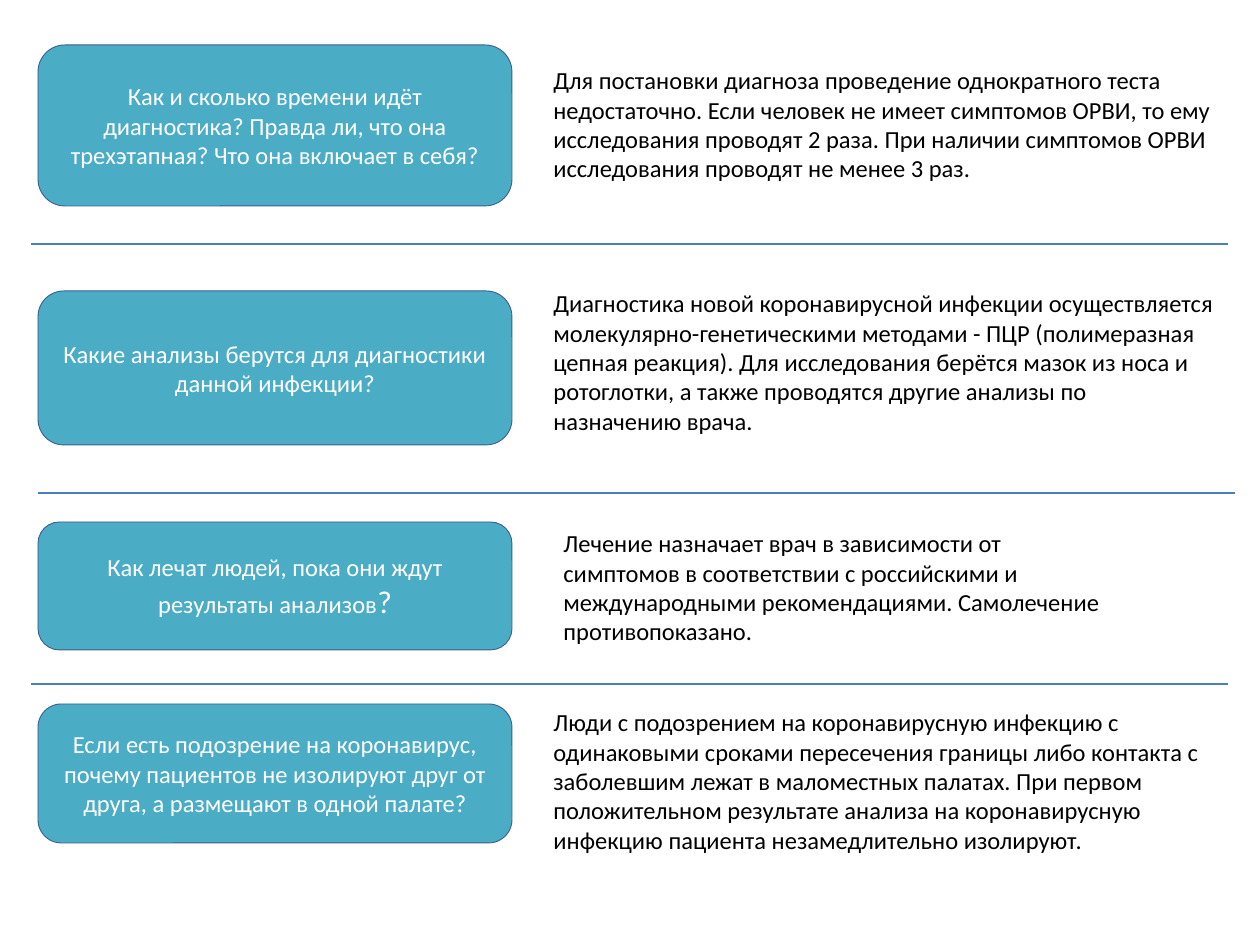
"""Build a slide of four questions about virus diagnostics with their answers."""
from lxml.etree import SubElement
from pptx import Presentation
from pptx.dml.color import RGBColor
from pptx.enum.shapes import MSO_CONNECTOR as Connector, MSO_SHAPE as Preset
from pptx.enum.text import MSO_ANCHOR as Anchor, MSO_AUTO_SIZE as Fit, PP_ALIGN as Align
from pptx.oxml.ns import qn
from pptx.util import Pt

PX_PER_INCH = 126
COLORS = {"card": "4BACC6", "outline": "3A5F8C", "rule": "4B7EBC",
          "question": "FFFFFF", "answer": "000000"}
QUESTION_FORMAT = {"word_wrap": True, "vertical_anchor": Anchor.MIDDLE}
ANSWER_FORMAT = {"word_wrap": True, "auto_size": Fit.SHAPE_TO_FIT_TEXT}
CARD_LEFT, CARD_WIDTH, RULE_WIDTH = 38, 474, 1197

QUESTIONS = [
    (45, 161, [("Как и сколько времени идёт диагностика? Правда ли, что она "
                "трехэтапная? Что она включает в себя?", 14)]),
    (291, 154, [("Какие анализы берутся для диагностики данной инфекции?", 14)]),
    (522, 128, [("Как лечат людей, пока они ждут результаты анализов", 14), ("?", 18)]),
    (704, 139, [("Если есть подозрение на коронавирус, почему пациентов не изолируют "
                 "друг от друга, а размещают в одной палате?", 14)]),
]
ANSWERS = [
    (541, 59, 688, 131,
     "Для постановки диагноза проведение однократного теста недостаточно. Если человек "
     "не имеет симптомов ОРВИ, то ему исследования проводят 2 раза. При наличии симптомов "
     "ОРВИ исследования проводят не менее 3 раз."),
    (541, 282, 688, 161,
     "Диагностика новой коронавирусной инфекции осуществляется молекулярно-генетическими "
     "методами - ПЦР (полимеразная цепная реакция). Для исследования берётся мазок из носа "
     "и ротоглотки, а также проводятся другие анализы по назначению врача."),
    (551, 522, 572, 131,
     "Лечение назначает врач в зависимости от симптомов в соответствии с российскими и "
     "международными рекомендациями. Самолечение противопоказано."),
    (541, 701, 688, 161,
     "Люди с подозрением на коронавирусную инфекцию с одинаковыми сроками пересечения "
     "границы либо контакта с заболевшим лежат в маломестных палатах. При первом "
     "положительном результате анализа на коронавирусную инфекцию пациента незамедлительно "
     "изолируют."),
]
RULES = [(31, 244), (38, 493), (31, 684)]


class SlideBuilder:
    """Hold the slide and its style, and add each kind of element."""

    def __init__(self, slide, font="Calibri"):
        self.slide = slide
        self.font = font

    @staticmethod
    def emu(*lengths):
        """Turn px into EMU."""
        return [round(length * 914400 / PX_PER_INCH) for length in lengths]

    @staticmethod
    def color(role):
        """Return the colour of a role."""
        return RGBColor.from_string(COLORS[role])

    def fill_text(self, frame, runs, role, align, frame_format):
        """Fill a text frame with one paragraph of sized runs."""
        for name, value in frame_format.items():
            setattr(frame, name, value)
        paragraph = frame.paragraphs[0]
        paragraph.alignment = align
        for text, size in runs:
            run = paragraph.add_run()
            run.text = text
            for name, value in {"name": self.font, "size": Pt(size)}.items():
                setattr(run.font, name, value)
            run.font.color.rgb = self.color(role)

    def question(self, top, height, runs):
        """Add a rounded card with a question."""
        card = self.slide.shapes.add_shape(
            Preset.ROUNDED_RECTANGLE, *self.emu(CARD_LEFT, top, CARD_WIDTH, height))
        card.shadow.inherit = False
        card.fill.solid()
        card.fill.fore_color.rgb = self.color("card")
        card.line.color.rgb = self.color("outline")
        card.line.width = Pt(0.5)
        self.fill_text(card.text_frame, runs, "question", Align.CENTER, QUESTION_FORMAT)

    def answer(self, left, top, width, height, text):
        """Add a text box with an answer."""
        box = self.slide.shapes.add_textbox(*self.emu(left, top, width, height))
        self.fill_text(box.text_frame, [(text, 14)], "answer", Align.LEFT, ANSWER_FORMAT)

    def rule(self, left, top):
        """Add a horizontal line between rows."""
        line = self.slide.shapes.add_connector(
            Connector.STRAIGHT, *self.emu(left, top, left + RULE_WIDTH, top))
        line.line.color.rgb = self.color("rule")
        line.line.width = Pt(0.75)
        SubElement(line._element.spPr, qn("a:effectLst"))


def main():
    """Build and save the slide."""
    deck = Presentation()
    deck.slide_width, deck.slide_height = SlideBuilder.emu(1260, 945)
    builder = SlideBuilder(deck.slides.add_slide(deck.slide_layouts[6]))
    for add, rows in ((builder.question, QUESTIONS), (builder.answer, ANSWERS),
                      (builder.rule, RULES)):
        for row in rows:
            add(*row)
    deck.save("out.pptx")


if __name__ == "__main__":
    main()
